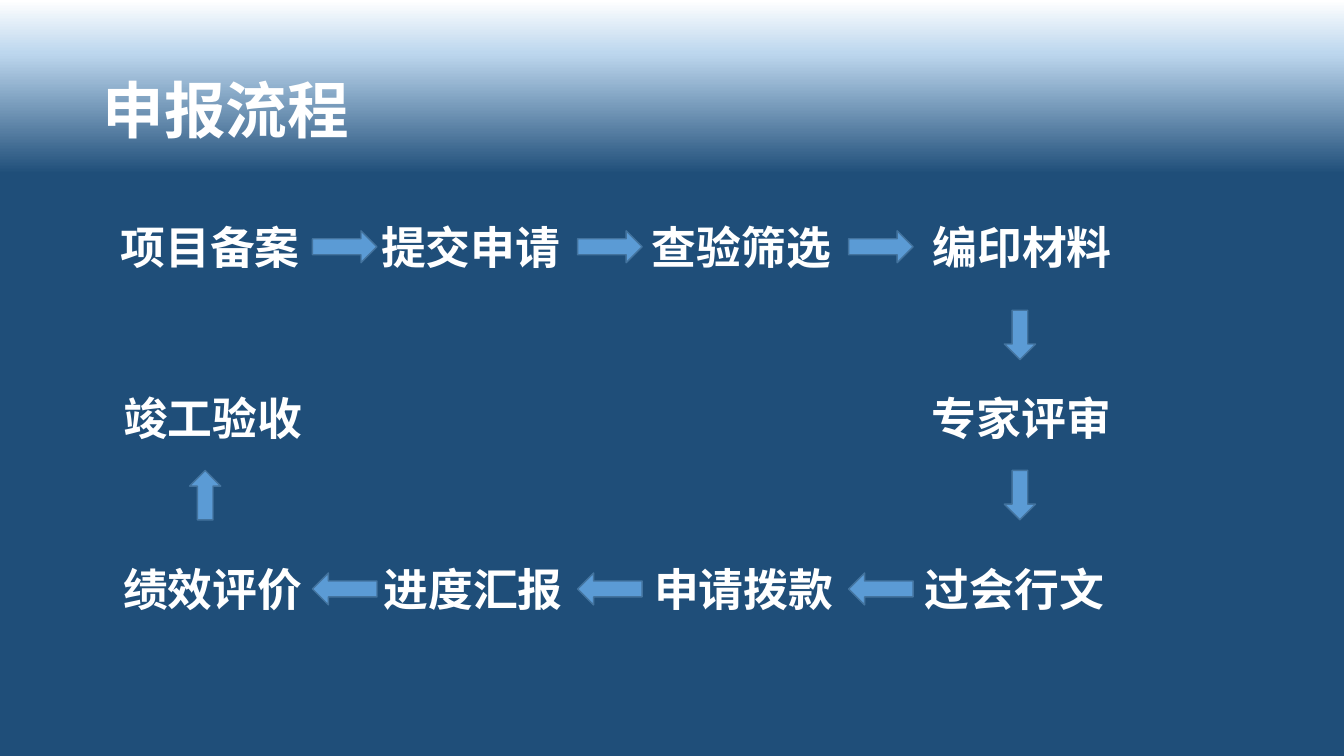
from copy import deepcopy

from pptx import Presentation
from pptx.dml.color import RGBColor
from pptx.enum.shapes import MSO_SHAPE as Shape
from pptx.enum.text import MSO_ANCHOR as Anchor, MSO_AUTO_SIZE as AutoSize, PP_ALIGN as Align
from pptx.oxml.ns import qn
from pptx.util import Pt

# Content: each row lists its steps, where each step starts and its line height
TITLE = "申报流程"
ROWS = [
    (["项目备案", "提交申请", "查验筛选", "编印材料"], [12.7, 198.6, 391.7, 592], 68.2),
    (["竣工验收", "专家评审"], [14.5, 592], 122),
    (["绩效评价", "进度汇报", "申请拨款", "过会行文"], [14.5, 200.3, 393.4, 586.5], 122),
]

THEME = {
    "font": "Calibri",
    "title_size": 44,
    "step_size": 32,
    "text": "FFFFFF",
    "arrow": "5B9BD5",
    "arrow_line": "43739E",
    "background": [(0, "FFFFFF"), (0.07, "BDD7EE"), (0.23, "1F4E79")],
}

# Layout in points
TITLE_BOX = (66.2, 28.8, 828, 104.4)
BODY_BOX = (66.2, 123.8, 828, 378.7)
SPACE_WIDTH = 7.23
ACROSS_SIZE, DOWN_SIZE = (46.1, 22.8), (22.3, 35.3)
ACROSS_LEFTS = [223.2, 412.6, 606.2]
TOP_ROW, BOTTOM_ROW = 164.9, 409.3
UPPER_GAP, LOWER_GAP = 221.6, 336
LEFT_COLUMN, RIGHT_COLUMN = 135.4, 717.4

ARROWS = [
    *[(Shape.RIGHT_ARROW, left, TOP_ROW, ACROSS_SIZE, 0) for left in ACROSS_LEFTS],
    *[(Shape.DOWN_ARROW, RIGHT_COLUMN, top, DOWN_SIZE, 0) for top in (UPPER_GAP, LOWER_GAP)],
    *[(Shape.LEFT_ARROW, left, BOTTOM_ROW, ACROSS_SIZE, 0) for left in reversed(ACROSS_LEFTS)],
    (Shape.DOWN_ARROW, LEFT_COLUMN, LOWER_GAP, DOWN_SIZE, 180),
]


def rgb(value):
    return RGBColor.from_string(value)


def set_values(target, values):
    for name, value in values.items():
        setattr(target, name, value)


def place(shape, box):
    set_values(shape, dict(zip(("left", "top", "width", "height"), map(Pt, box))))


def format_paragraph(paragraph, line_spacing):
    set_values(paragraph, {"alignment": Align.LEFT, "line_spacing": line_spacing,
                           "space_before": Pt(0), "space_after": Pt(0)})


def add_run(paragraph, text, size):
    run = paragraph.add_run()
    run.text = text
    set_values(run.font, {"name": THEME["font"], "size": Pt(size), "bold": True})
    run.font.color.rgb = rgb(THEME["text"])
    return run


def add_steps(paragraph, steps, starts):
    """Write the steps on one line, parted by single spaces of a set width."""
    properties = paragraph._p.get_or_add_pPr()
    properties.set("marL", str(int(Pt(starts[0]))))
    properties.set("indent", "0")
    properties.append(properties.makeelement(qn("a:buNone"), {}))
    end = starts[0]
    for step, start in zip(steps, starts):
        if start > end:
            gap = add_run(paragraph, " ", THEME["step_size"])
            tracking = start - end - SPACE_WIDTH
            gap._r.get_or_add_rPr().set("spc", str(round(tracking * 100)))
        add_run(paragraph, step, THEME["step_size"])
        end = start + len(step) * THEME["step_size"]


presentation = Presentation()
set_values(presentation, {"slide_width": Pt(960), "slide_height": Pt(540)})
slide = presentation.slides.add_slide(presentation.slide_layouts[1])

# Background gradient, top to bottom
fill = slide.background.fill
fill.gradient()
fill.gradient_angle = 270
stop_list = slide.element.find(".//" + qn("a:gsLst"))
stop_list.append(deepcopy(stop_list[-1]))
for stop, (position, color) in zip(fill.gradient_stops, THEME["background"]):
    stop.position = position
    stop.color.rgb = rgb(color)

# Title
title = slide.shapes.title
place(title, TITLE_BOX)
set_values(title.text_frame, {"vertical_anchor": Anchor.MIDDLE, "auto_size": AutoSize.NONE})
format_paragraph(title.text_frame.paragraphs[0], 0.9)
add_run(title.text_frame.paragraphs[0], TITLE, THEME["title_size"])

# Steps, one paragraph per row
body = slide.placeholders[1]
place(body, BODY_BOX)
frame = body.text_frame
set_values(frame, {"vertical_anchor": Anchor.TOP, "auto_size": AutoSize.NONE})
for index, (steps, starts, line_height) in enumerate(ROWS):
    paragraph = frame.add_paragraph() if index else frame.paragraphs[0]
    format_paragraph(paragraph, Pt(line_height))
    add_steps(paragraph, steps, starts)

# Arrows, in the order of the process
for kind, left, top, size, rotation in ARROWS:
    arrow = slide.shapes.add_shape(kind, *map(Pt, (left, top, *size)))
    arrow.rotation = rotation
    arrow.shadow.inherit = False
    arrow.fill.solid()
    arrow.fill.fore_color.rgb = rgb(THEME["arrow"])
    arrow.line.color.rgb = rgb(THEME["arrow_line"])
    arrow.line.width = Pt(1)

presentation.save("out.pptx")
